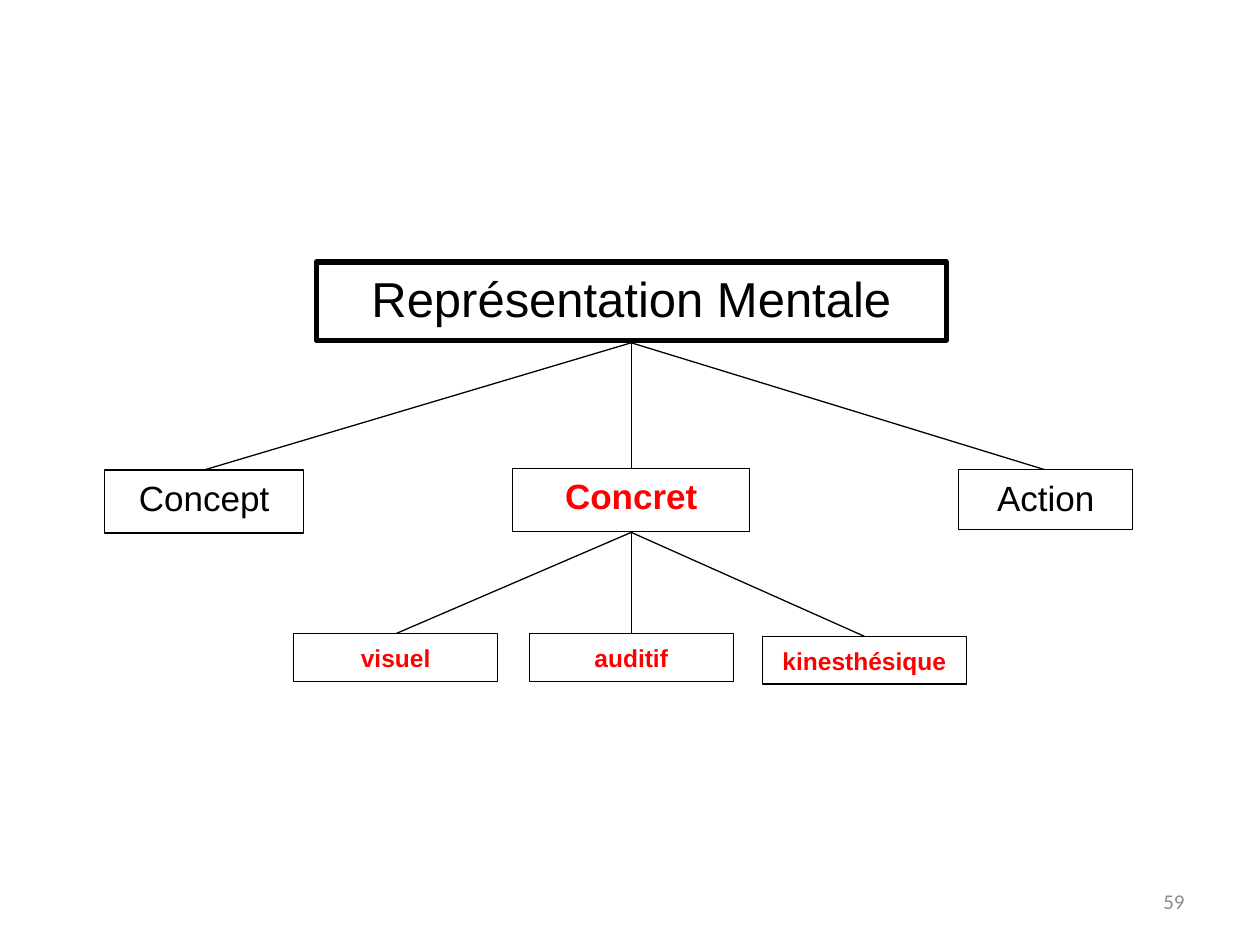
from dataclasses import dataclass

from lxml import etree
from pptx import Presentation
from pptx.dml.color import RGBColor
from pptx.enum.shapes import MSO_CONNECTOR, MSO_SHAPE
from pptx.enum.text import MSO_ANCHOR, PP_ALIGN
from pptx.oxml.ns import qn
from pptx.util import Pt

STRAIGHT = MSO_CONNECTOR.STRAIGHT
RECTANGLE = MSO_SHAPE.RECTANGLE
TOP, MIDDLE = MSO_ANCHOR.TOP, MSO_ANCHOR.MIDDLE
CENTER, RIGHT = PP_ALIGN.CENTER, PP_ALIGN.RIGHT


@dataclass(frozen=True)
class Theme:
    black: RGBColor = RGBColor(0x00, 0x00, 0x00)
    white: RGBColor = RGBColor(0xFF, 0xFF, 0xFF)
    red: RGBColor = RGBColor(0xFF, 0x00, 0x00)
    gray: RGBColor = RGBColor(0x8C, 0x8C, 0x8C)
    font: str = "Arial"
    number_font: str = "Calibri"
    root_size: float = 28
    branch_size: float = 20
    leaf_size: float = 14
    number_size: float = 12
    line: float = 0.75


THEME = Theme()


@dataclass(frozen=True)
class Node:
    """A box of the tree; lengths in points."""
    text: str
    left: float
    top: float
    width: float
    height: float
    size: float
    border: float = THEME.line
    highlighted: bool = False
    anchor: MSO_ANCHOR = TOP

    @property
    def center(self) -> float:
        return self.left + self.width / 2

    @property
    def outer_bottom(self) -> float:
        return self.top + self.height + self.border / 2


def leaf(text: str, left: float, top: float) -> Node:
    return Node(text, left, top, 116.64, 27.36, THEME.leaf_size,
                highlighted=True, anchor=MIDDLE)


# Tree content
ROOT = Node("Représentation Mentale", 180.72, 149.76, 360, 44.64,
            THEME.root_size, border=3)
CONCEPT = Node("Concept", 59.76, 268.56, 113.76, 36, THEME.branch_size)
CONCRETE = Node("Concret", 293.04, 267.84, 135.36, 36, THEME.branch_size,
                highlighted=True)
ACTION = Node("Action", 547.92, 268.56, 99.36, 33.84, THEME.branch_size,
              border=0.5)
LEAVES = (leaf("visuel", 167.76, 362.16), leaf("auditif", 302.4, 362.16),
          leaf("kinesthésique", 435.6, 363.6))
TREE = ((ROOT, (CONCEPT, CONCRETE, ACTION)), (CONCRETE, LEAVES))


def write_text(box, text: str, *, size: float, color: RGBColor,
               font: str = THEME.font, bold: bool = False,
               align: PP_ALIGN = CENTER, anchor: MSO_ANCHOR = TOP) -> None:
    frame = box.text_frame
    frame.word_wrap = True
    frame.vertical_anchor = anchor
    para = frame.paragraphs[0]
    para.alignment = align
    span = para.add_run()
    span.text = text
    span.font.name = font
    span.font.size = Pt(size)
    span.font.bold = bold
    span.font.color.rgb = color


def draw_link(page, parent: Node, child: Node) -> None:
    link = page.shapes.add_connector(
        STRAIGHT, Pt(parent.center), Pt(parent.outer_bottom),
        Pt(child.center), Pt(child.top))
    link.line.color.rgb = THEME.black
    link.line.width = Pt(THEME.line)
    etree.SubElement(link._element.spPr, qn("a:effectLst"))


def draw_node(page, node: Node) -> None:
    box = page.shapes.add_shape(RECTANGLE, Pt(node.left), Pt(node.top),
                                Pt(node.width), Pt(node.height))
    box.shadow.inherit = False
    box.fill.solid()
    box.fill.fore_color.rgb = THEME.white
    box.line.color.rgb = THEME.black
    box.line.width = Pt(node.border)
    write_text(box, node.text, size=node.size, bold=node.highlighted,
               color=THEME.red if node.highlighted else THEME.black,
               anchor=node.anchor)


def main() -> None:
    deck = Presentation()
    deck.slide_width, deck.slide_height = Pt(720), Pt(540)
    page = deck.slides.add_slide(deck.slide_layouts.get_by_name("Blank"))

    # Page number
    number = page.shapes.add_textbox(Pt(516), Pt(500.5), Pt(168), Pt(28.75))
    write_text(number, "59", size=THEME.number_size, color=THEME.gray,
               font=THEME.number_font, align=RIGHT, anchor=MIDDLE)

    # Links lie behind the boxes
    for parent, children in TREE:
        for child in children:
            draw_link(page, parent, child)

    # Boxes
    draw_node(page, ROOT)
    for _, children in TREE:
        for child in children:
            draw_node(page, child)

    deck.save("out.pptx")


if __name__ == "__main__":
    main()
